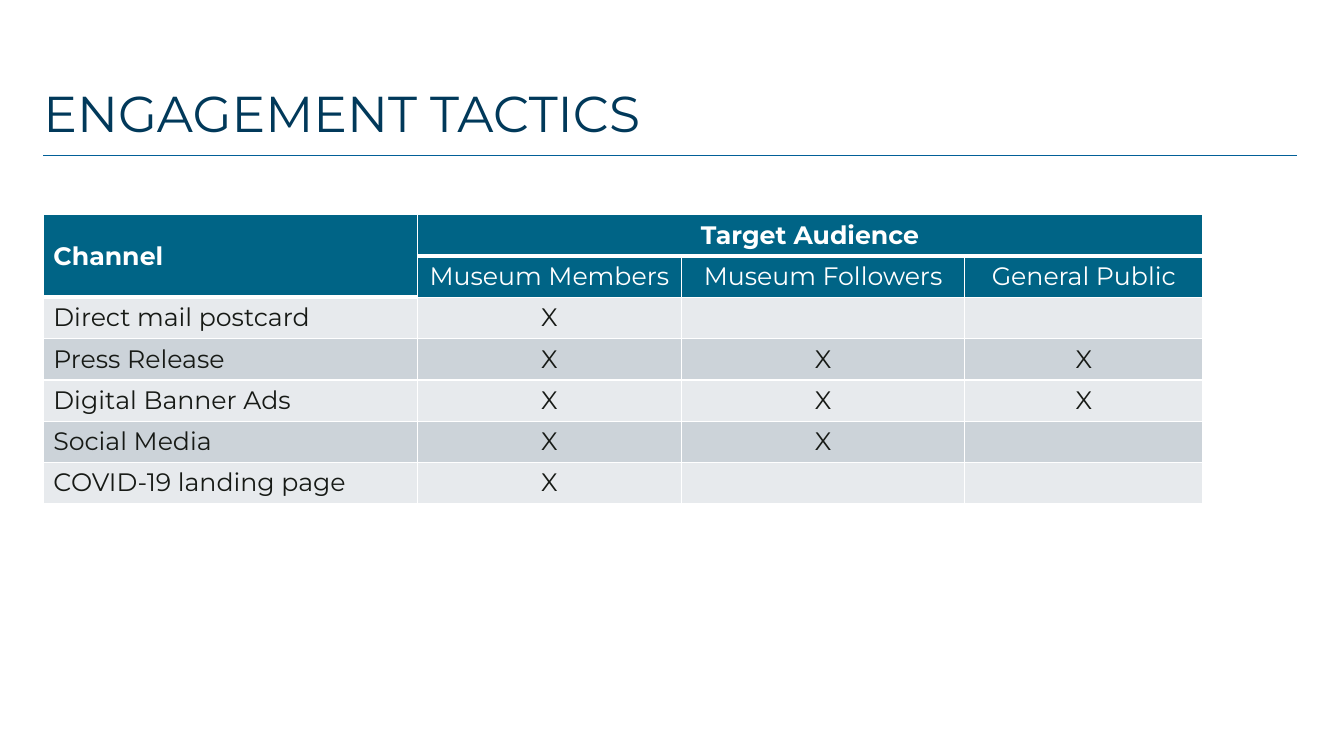
from dataclasses import dataclass

from lxml import etree
from pptx import Presentation
from pptx.dml.color import RGBColor
from pptx.enum.shapes import MSO_CONNECTOR
from pptx.enum.text import MSO_ANCHOR, MSO_AUTO_SIZE, PP_ALIGN
from pptx.oxml.ns import qn
from pptx.slide import Slide
from pptx.table import Table, _Cell
from pptx.util import Inches, Pt

STRAIGHT = MSO_CONNECTOR.STRAIGHT
MIDDLE = MSO_ANCHOR.MIDDLE
TOP = MSO_ANCHOR.TOP
BOTTOM = MSO_ANCHOR.BOTTOM
NO_AUTOFIT = MSO_AUTO_SIZE.NONE
LEFT = PP_ALIGN.LEFT
CENTER = PP_ALIGN.CENTER

FONT = "Montserrat"
WHITE = RGBColor(0xFF, 0xFF, 0xFF)
NAVY = RGBColor(0x01, 0x39, 0x5A)
RULE_BLUE = RGBColor(0x02, 0x60, 0x98)
TEAL = RGBColor(0x00, 0x64, 0x86)
INK = RGBColor(0x17, 0x1A, 0x16)
BANDS = (RGBColor(0xE7, 0xEA, 0xED), RGBColor(0xCC, 0xD3, 0xD9))

MARGIN = 0.43
CONTENT_WIDTH = 12.43
COLUMN_WIDTHS = (3.71, 2.62, 2.81, 2.36)
ROW_HEIGHT = 0.41
HEADER_ROWS = 2
AUDIENCES = ("Museum Members", "Museum Followers", "General Public")


@dataclass(frozen=True)
class Channel:
    name: str
    audiences: tuple[str, ...]


CHANNELS = (
    Channel("Direct mail postcard", AUDIENCES[:1]),
    Channel("Press Release", AUDIENCES),
    Channel("Digital Banner Ads", AUDIENCES),
    Channel("Social Media", AUDIENCES[:2]),
    Channel("COVID-19 landing page", AUDIENCES[:1]),
)


def add_title(slide: Slide, text: str) -> None:
    title = slide.shapes.title
    title.left, title.top = Inches(MARGIN), Inches(0.37)
    title.width, title.height = Inches(CONTENT_WIDTH), Inches(1.1)
    frame = title.text_frame
    frame.text = text
    frame.word_wrap = True
    frame.auto_size = NO_AUTOFIT
    frame.vertical_anchor = BOTTOM
    frame.margin_left = frame.margin_right = 0
    frame.margin_top = frame.margin_bottom = Inches(0.05)
    paragraph = frame.paragraphs[0]
    paragraph.alignment = LEFT
    paragraph.line_spacing = 0.9
    paragraph.font.name = FONT
    paragraph.font.size = Pt(36)
    paragraph.font.color.rgb = NAVY


def add_title_rule(slide: Slide) -> None:
    top = Inches(1.54)
    rule = slide.shapes.add_connector(
        STRAIGHT, Inches(MARGIN), top, Inches(MARGIN + CONTENT_WIDTH), top
    )
    rule.line.color.rgb = RULE_BLUE
    rule.line.width = Pt(1)
    etree.SubElement(rule._element.spPr, qn("a:effectLst"))


def set_borders(cell: _Cell, bottom_width: int) -> None:
    properties = cell._tc.get_or_add_tcPr()
    widths = {"a:lnL": 1, "a:lnR": 1, "a:lnT": 1, "a:lnB": bottom_width}
    for position, (side, width) in enumerate(widths.items()):
        border = etree.Element(qn(side), w=str(Pt(width)))
        fill = etree.SubElement(border, qn("a:solidFill"))
        etree.SubElement(fill, qn("a:srgbClr"), val=str(WHITE))
        properties.insert(position, border)


def format_cell(table: Table, row: int, column: int, text: str) -> None:
    cell = table.cell(row, column)
    is_header = row < HEADER_ROWS
    is_bold = row == 0 or (is_header and column == 0)
    cell.text = text
    cell.vertical_anchor = MIDDLE if is_header and column == 0 else TOP
    cell.fill.solid()
    cell.fill.fore_color.rgb = TEAL if is_header else BANDS[row % len(BANDS)]
    set_borders(cell, 3 if is_bold else 1)
    paragraph = cell.text_frame.paragraphs[0]
    paragraph.alignment = CENTER if column else LEFT
    paragraph.font.name = FONT
    paragraph.font.size = Pt(18)
    paragraph.font.bold = is_bold
    paragraph.font.color.rgb = WHITE if is_header else INK


def add_channel_table(slide: Slide) -> None:
    rows = [("Channel", "Target Audience", "", ""), ("", *AUDIENCES)]
    for channel in CHANNELS:
        marks = ["X" if name in channel.audiences else "" for name in AUDIENCES]
        rows.append((channel.name, *marks))
    table = slide.shapes.add_table(
        len(rows), len(COLUMN_WIDTHS), Inches(MARGIN), Inches(2.13),
        Inches(sum(COLUMN_WIDTHS)), Inches(ROW_HEIGHT * len(rows)),
    ).table
    for column, width in zip(table.columns, COLUMN_WIDTHS):
        column.width = Inches(width)
    for row in table.rows:
        row.height = Inches(ROW_HEIGHT)
    for row_index, texts in enumerate(rows):
        for column_index, text in enumerate(texts):
            format_cell(table, row_index, column_index, text)
    table.cell(0, 0).merge(table.cell(1, 0))
    table.cell(0, 1).merge(table.cell(0, len(AUDIENCES)))


def main() -> None:
    presentation = Presentation()
    presentation.slide_width = Inches(13.33)
    presentation.slide_height = Inches(7.5)
    title_only = presentation.slide_layouts.get_by_name("Title Only")
    slide = presentation.slides.add_slide(title_only)
    add_title(slide, "ENGAGEMENT TACTICS")
    add_title_rule(slide)
    add_channel_table(slide)
    presentation.save("out.pptx")


if __name__ == "__main__":
    main()
